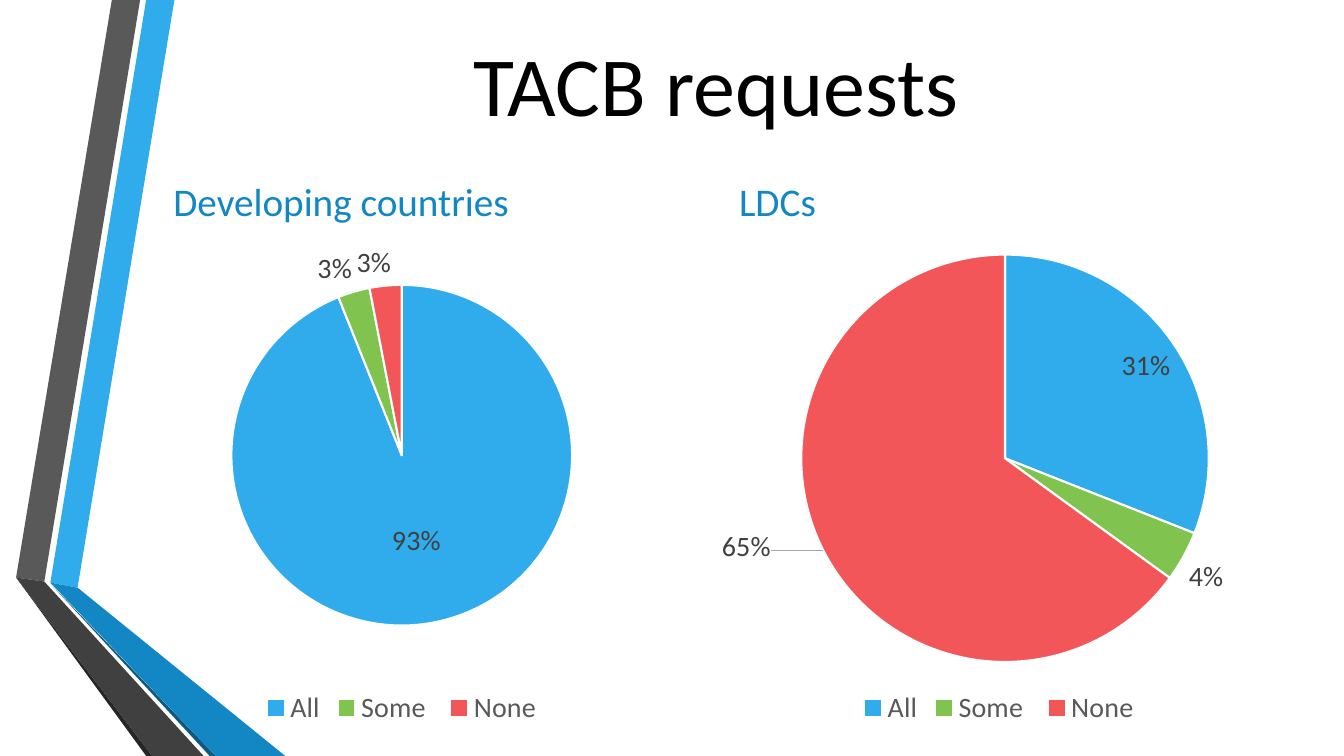
import pptx
import pptx.chart.data
import pptx.dml.color
import pptx.enum.chart
import pptx.enum.text
import pptx.util
from lxml import etree
from pptx.util import Inches, Pt

FONT = "Calibri"
COLORS = {
    "black": "000000", "white": "FFFFFF", "heading": "1287C3",
    "label": "404040", "legend": "595959", "leader": "A6A6A6",
    "All": "30ACEC", "Some ": "80C34F", "None": "F25658",
    "blue": "30ACEC", "grey": "595959",
    "grey edge": "262626", "blue edge": "0C5A82",
    "blue foot": "1287C3", "grey foot": "404040",
}
# Corners in inches, relative to the slide's top left
BANDS = {
    "blue": [(0.5, 5.78), (0.77, 5.83), (1.73, 0), (1.45, 0)],
    "grey": [(1.39, 0), (1.11, 0), (0.16, 5.73), (0.44, 5.77)],
    "grey edge": [(0.16, 5.73), (1.45, 7.5), (1.51, 7.5)],
    "blue edge": [(0.5, 5.79), (2.08, 7.5), (2.14, 7.5)],
    "blue foot": [(0.5, 5.78), (2.14, 7.5), (2.83, 7.5), (0.77, 5.83)],
    "grey foot": [(0.16, 5.73), (1.51, 7.5), (2.02, 7.5), (0.44, 5.77)],
}


def rgb(name):
    return pptx.dml.color.RGBColor.from_string(COLORS[name])


def set_font(font, size, color):
    font.name, font.size, font.bold = FONT, Pt(size), False
    font.color.rgb = rgb(color)


def draw_bands(slide, left, top):
    """Folded ribbons along the left edge."""
    for name, corners in BANDS.items():
        points = [(Inches(left + x), Inches(top + y)) for x, y in corners]
        builder = slide.shapes.build_freeform(*points[0])
        builder.add_line_segments(points[1:], close=True)
        sp = builder.convert_to_shape()
        sp.shadow.inherit = False
        sp.fill.solid()
        sp.fill.fore_color.rgb = rgb(name)
        sp.line.fill.background()


def fill_text(sp, box, text, size, color, anchor, align):
    """Place a text placeholder in its box and format it."""
    sp.left, sp.top, sp.width, sp.height = map(Inches, box)
    tf = sp.text_frame
    tf.text = text
    tf.word_wrap = True
    tf.auto_size = pptx.enum.text.MSO_AUTO_SIZE.NONE
    tf.vertical_anchor = anchor
    p = tf.paragraphs[0]
    p.alignment = align
    set_font(p.font, size, color)
    return p


def add_layout(parent, index, **fractions):
    """Set a manual chart layout, given in fractions of the chart."""
    ns = parent.nsmap["c"]
    for old in parent.findall(f"{{{ns}}}layout"):
        parent.remove(old)
    layout = etree.Element(f"{{{ns}}}layout")
    manual = etree.SubElement(layout, f"{{{ns}}}manualLayout")
    for tag, value in fractions.items():
        etree.SubElement(manual, f"{{{ns}}}{tag}", val=str(value))
    parent.insert(index, layout)


def add_leader_lines(dLbls):
    """Thin lines from moved labels to their slices."""
    c, a = (f"{{{dLbls.nsmap[prefix]}}}" for prefix in "ca")
    for old in dLbls.findall(c + "showLeaderLines"):
        dLbls.remove(old)
    etree.SubElement(dLbls, c + "showLeaderLines", val="1")
    lines = etree.SubElement(dLbls, c + "leaderLines")
    ln = etree.SubElement(etree.SubElement(lines, c + "spPr"), a + "ln",
                          w=str(Pt(0.75)))
    fill = etree.SubElement(ln, a + "solidFill")
    etree.SubElement(fill, a + "srgbClr", val=COLORS["leader"])


def add_pie(slide, box, values, plot_box, moved_point, offset):
    """Pie of request shares with one label moved by hand."""
    data = pptx.chart.data.CategoryChartData(number_format='0"%"')
    data.categories = ["All", "Some ", "None"]
    data.add_series("Series 1", values)
    chart = slide.shapes.add_chart(
        pptx.enum.chart.XL_CHART_TYPE.PIE, *map(Inches, box), data).chart
    set_font(chart.font, 20, "black")
    chart.has_title = False

    # Legend
    chart.has_legend = True
    chart.legend.position = pptx.enum.chart.XL_LEGEND_POSITION.BOTTOM
    chart.legend.include_in_layout = False
    set_font(chart.legend.font, 20, "legend")

    # Slices
    plot = chart.plots[0]
    plot.vary_by_categories = True
    series = plot.series[0]
    for i, name in enumerate(plot.categories):
        fmt = series.points[i].format
        fmt.fill.solid()
        fmt.fill.fore_color.rgb = rgb(name)
        fmt.line.color.rgb = rgb("white")
        fmt.line.width = Pt(1.5)
    x, y, w, h = plot_box
    add_layout(chart.element.chart.plotArea, 0, layoutTarget="inner",
               xMode="edge", yMode="edge", x=x, y=y, w=w, h=h)

    # Labels
    best_fit = pptx.enum.chart.XL_LABEL_POSITION.BEST_FIT
    labels = series.data_labels
    labels.show_value = True
    labels.number_format = '0"%"'
    labels.number_format_is_linked = False
    labels.position = best_fit
    set_font(labels.font, 20, "label")
    moved = series.points[moved_point].data_label
    moved.position = best_fit
    set_font(moved.font, 20, "label")
    dLbls = labels._element
    add_layout(dLbls.dLbl_lst[0], 1, x=offset[0], y=offset[1])
    add_leader_lines(dLbls)


def build_slide(prs):
    slide = prs.slides.add_slide(prs.slide_layouts.get_by_name("Comparison"))
    holders = {sp.placeholder_format.idx: sp for sp in slide.placeholders}
    anchor, align = pptx.enum.text.MSO_ANCHOR, pptx.enum.text.PP_ALIGN

    # Title and headings
    fill_text(holders[0], (1.62, 0.41, 10.96, 0.82), "TACB requests",
              60, "black", anchor.MIDDLE, align.CENTER)
    headings = [(1, (1.62, 1.65, 5.35, 0.63), "Developing countries"),
                (3, (7.23, 1.65, 5.23, 0.63), "LDCs")]
    for idx, box, text in headings:
        p = fill_text(holders[idx], box, text, 28, "heading",
                      anchor.BOTTOM, align.LEFT)
        p.space_after = Pt(6)
    for idx in (2, 4):
        sp = holders[idx]._element
        sp.getparent().remove(sp)

    # Ribbons and charts
    draw_bands(slide, 0, 0)
    add_pie(slide, (1.31, 2.28, 5.35, 4.97), (93, 3, 3),
            (0.18, 0.11, 0.64, 0.68), 0, (-0.08, -0.21))
    add_pie(slide, (6.98, 2.38, 5.86, 4.87), (31, 4, 65),
            (0.16, 0.03, 0.7, 0.83), 2, (-0.08, -0.05))


def main():
    prs = pptx.Presentation()
    prs.slide_width, prs.slide_height = Inches(13.33), Inches(7.5)
    build_slide(prs)
    prs.save("out.pptx")


if __name__ == "__main__":
    main()
